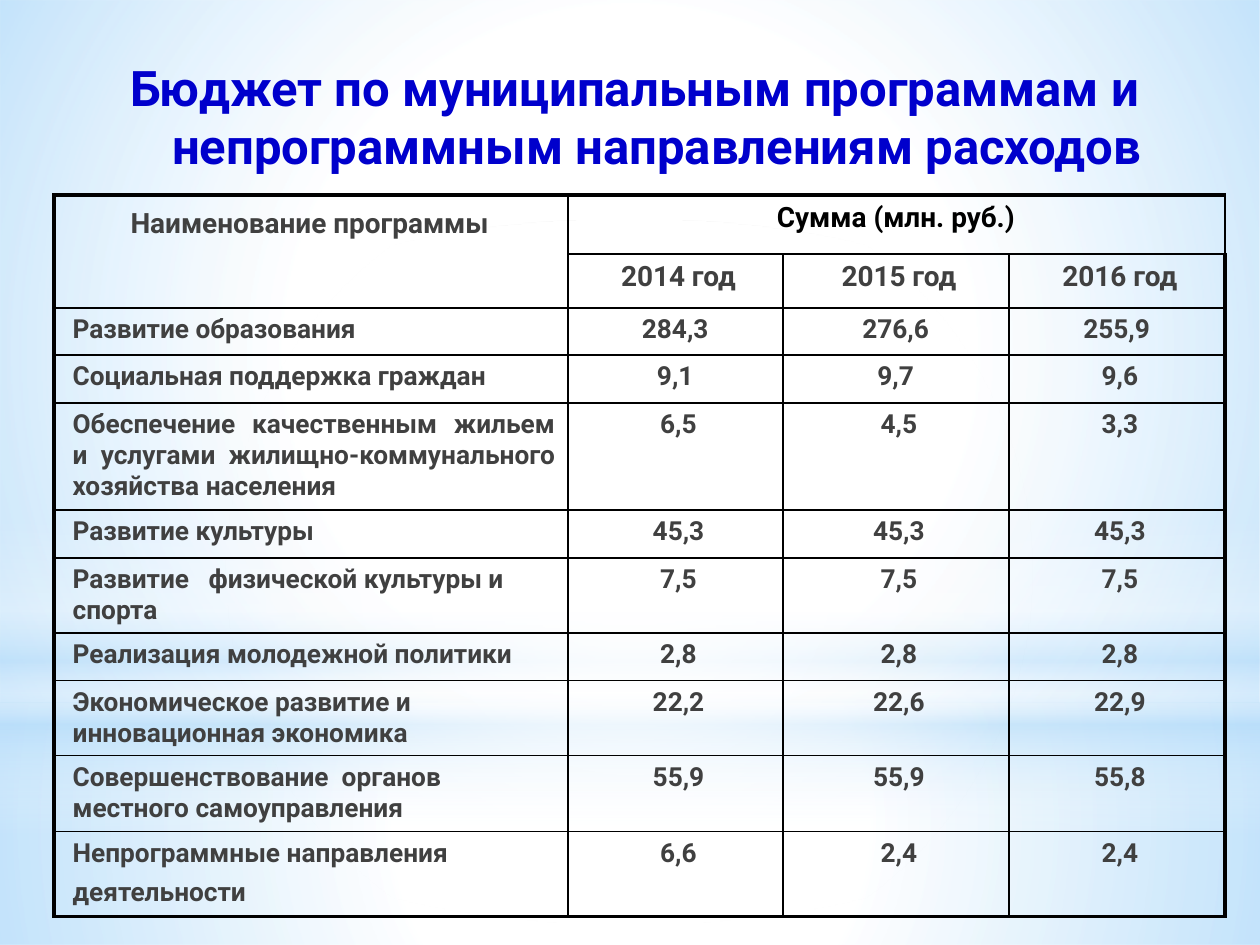
from lxml import etree
from pptx import Presentation
from pptx import util as u
from pptx.dml.color import RGBColor
from pptx.enum import shapes, text
from pptx.oxml import ns

PX_PER_INCH = 126
FONT = "Roboto"
WHITE = RGBColor(0xFF, 0xFF, 0xFF)
SKY = RGBColor(0xB4, 0xDC, 0xFA)
BLUE = RGBColor(0x00, 0x00, 0xCC)
GRAY = RGBColor(0x40, 0x40, 0x40)
BLACK = RGBColor(0x00, 0x00, 0x00)

LEFT, CENTER, JUSTIFY = text.PP_ALIGN.LEFT, text.PP_ALIGN.CENTER, text.PP_ALIGN.JUSTIFY

TITLE = "Бюджет по муниципальным программам и непрограммным направлениям расходов"
YEARS = ["2014 год", "2015 год", "2016 год"]
PROGRAMS = [
    ("Развитие образования", JUSTIFY, "284,3 ", "276,6 ", "255,9 "),
    ("Социальная поддержка граждан", JUSTIFY, "9,1 ", "9,7 ", "9,6"),
    ("Обеспечение качественным жильем и услугами жилищно-коммунального "
     "хозяйства населения", JUSTIFY, "6,5", "4,5", "3,3"),
    ("Развитие культуры", LEFT, "45,3", "45,3", "45,3"),
    ("Развитие   физической культуры и спорта", LEFT, "7,5", "7,5", "7,5"),
    ("Реализация молодежной политики", LEFT, "2,8", "2,8", "2,8"),
    ("Экономическое развитие и инновационная экономика", LEFT, "22,2", "22,6", "22,9"),
    ("Совершенствование  органов местного самоуправления", LEFT, "55,9", "55,9", "55,8"),
    ("Непрограммные направления деятельности", LEFT, "6,6", "2,4", "2,4"),
]
COLUMN_WIDTHS = [514, 215, 226, 216]
ROW_HEIGHTS = [59, 54, 47, 48, 107, 48, 75, 48, 75, 76, 84]


def px(length):
    return u.Inches(length / PX_PER_INCH)


def add_child(parent, tag, **attributes):
    child = etree.SubElement(parent, ns.qn(tag))
    for name, value in attributes.items():
        child.set(name, str(value))
    return child


def set_gradient(shape, stops, circular):
    """Fill with (position, colour, opacity) stops, all in percent."""
    shape.fill.gradient()
    gradient = shape.element.spPr.find(ns.qn("a:gradFill"))
    for child in list(gradient):
        gradient.remove(child)
    stop_list = add_child(gradient, "a:gsLst")
    for position, color, opacity in stops:
        stop = add_child(stop_list, "a:gs", pos=position * 1000)
        color_element = add_child(stop, "a:srgbClr", val=color)
        add_child(color_element, "a:alpha", val=opacity * 1000)
    if circular:
        path = add_child(gradient, "a:path", path="circle")
        add_child(path, "a:fillToRect", l=50000, t=50000, r=50000, b=50000)
    else:
        add_child(gradient, "a:lin", ang=90 * 60000, scaled=0)


def add_backdrop(slide, left, top, width, height):
    """Layer the soft glows behind the title."""
    slide.background.fill.solid()
    slide.background.fill.fore_color.rgb = WHITE
    rectangle, oval = shapes.MSO_SHAPE.RECTANGLE, shapes.MSO_SHAPE.OVAL
    horizon = 703
    layers = [
        (rectangle, horizon, height - horizon, True,
         [(0, WHITE, 91), (37, WHITE, 76), (100, SKY, 79)]),
        (rectangle, 0, horizon, True,
         [(0, WHITE, 89), (48, WHITE, 62), (100, SKY, 79)]),
        (rectangle, 519, 315, False,
         [(0, WHITE, 0), (29, WHITE, 30), (45, SKY, 40),
          (55, WHITE, 26), (65, SKY, 60), (100, WHITE, 0)]),
        (oval, 220, horizon, True, [(0, WHITE, 100), (56, WHITE, 0)]),
    ]
    for kind, offset, layer_height, circular, stops in layers:
        shape = slide.shapes.add_shape(
            kind, px(left), px(top + offset), px(width), px(layer_height))
        shape.shadow.inherit = False
        shape.line.fill.background()
        set_gradient(shape, stops, circular)
        slide.shapes.title.element.addprevious(shape.element)


def set_indent(paragraph, margin, first_line=0):
    properties = paragraph._p.get_or_add_pPr()
    properties.set("marL", str(px(margin)))
    properties.set("indent", str(px(first_line)))


def format_run(run, size, color, bold=True):
    run.font.name = FONT
    run.font.size = u.Pt(size)
    run.font.bold = bold
    run.font.color.rgb = color


def place_title(slide, left, top, width, height):
    title = slide.shapes.title
    title.left, title.top, title.width, title.height = map(px, (left, top, width, height))
    frame = title.text_frame
    frame.text = TITLE
    frame.word_wrap = True
    frame.auto_size = text.MSO_AUTO_SIZE.NONE
    frame.vertical_anchor = text.MSO_ANCHOR.TOP
    frame.margin_top, frame.margin_bottom = px(12), 0
    paragraph = frame.paragraphs[0]
    paragraph.alignment = CENTER
    set_indent(paragraph, 44, -44)
    format_run(paragraph.runs[0], 28, BLUE)


def fill_cell(cell, content, size, color=GRAY, alignment=CENTER, tall_end=False):
    """Write a cell; tall_end closes its last line with a larger space."""
    cell.text_frame.text = content
    paragraph = cell.text_frame.paragraphs[0]
    paragraph.alignment = alignment
    paragraph.space_after = u.Pt(3)
    set_indent(paragraph, 6)
    format_run(paragraph.runs[0], size, color)
    if tall_end:
        space = paragraph.add_run()
        space.text = " "
        format_run(space, 20, color, bold=False)


def set_borders(cell, thick_sides):
    properties = cell._tc.get_or_add_tcPr()
    for side in "LRTB":
        width = u.Pt(2.25 if side in thick_sides else 1)
        line = add_child(properties, "a:ln" + side, w=int(width))
        add_child(add_child(line, "a:solidFill"), "a:srgbClr", val=BLACK)
    cell.fill.background()


def add_budget_table(slide, left, top):
    frame = slide.shapes.add_table(
        len(ROW_HEIGHTS), len(COLUMN_WIDTHS), px(left), px(top),
        px(sum(COLUMN_WIDTHS)), px(sum(ROW_HEIGHTS)))
    table = frame.table
    table.first_row = table.horz_banding = False
    for column, width in zip(table.columns, COLUMN_WIDTHS):
        column.width = px(width)
    for row, height in zip(table.rows, ROW_HEIGHTS):
        row.height = px(height)

    last_row, last_column = len(ROW_HEIGHTS) - 1, len(COLUMN_WIDTHS) - 1
    for i in range(last_row + 1):
        for j in range(last_column + 1):
            edges = {"L": j == 0, "R": j == last_column, "T": i == 0, "B": i == last_row}
            set_borders(table.cell(i, j), [side for side in edges if edges[side]])

    table.cell(0, 0).merge(table.cell(1, 0))
    table.cell(0, 1).merge(table.cell(0, last_column))
    fill_cell(table.cell(0, 0), "Наименование программы", 16, tall_end=True)
    fill_cell(table.cell(0, 1), "Сумма (млн. руб.) ", 16, BLACK)
    for j, year in enumerate(YEARS, start=1):
        fill_cell(table.cell(1, j), year, 16)
    for i, (name, alignment, *amounts) in enumerate(PROGRAMS, start=2):
        fill_cell(table.cell(i, 0), name, 15, alignment=alignment, tall_end=i == last_row)
        for j, amount in enumerate(amounts, start=1):
            fill_cell(table.cell(i, j), amount, 15)


def main():
    presentation = Presentation()
    presentation.slide_width, presentation.slide_height = px(1260), px(945)
    slide = presentation.slides.add_slide(presentation.slide_layouts[5])
    add_backdrop(slide, 0, 0, 1260, 945)
    place_title(slide, 44, 45, 1181, 129)
    add_budget_table(slide, 54, 195)
    presentation.save("out.pptx")


if __name__ == "__main__":
    main()
